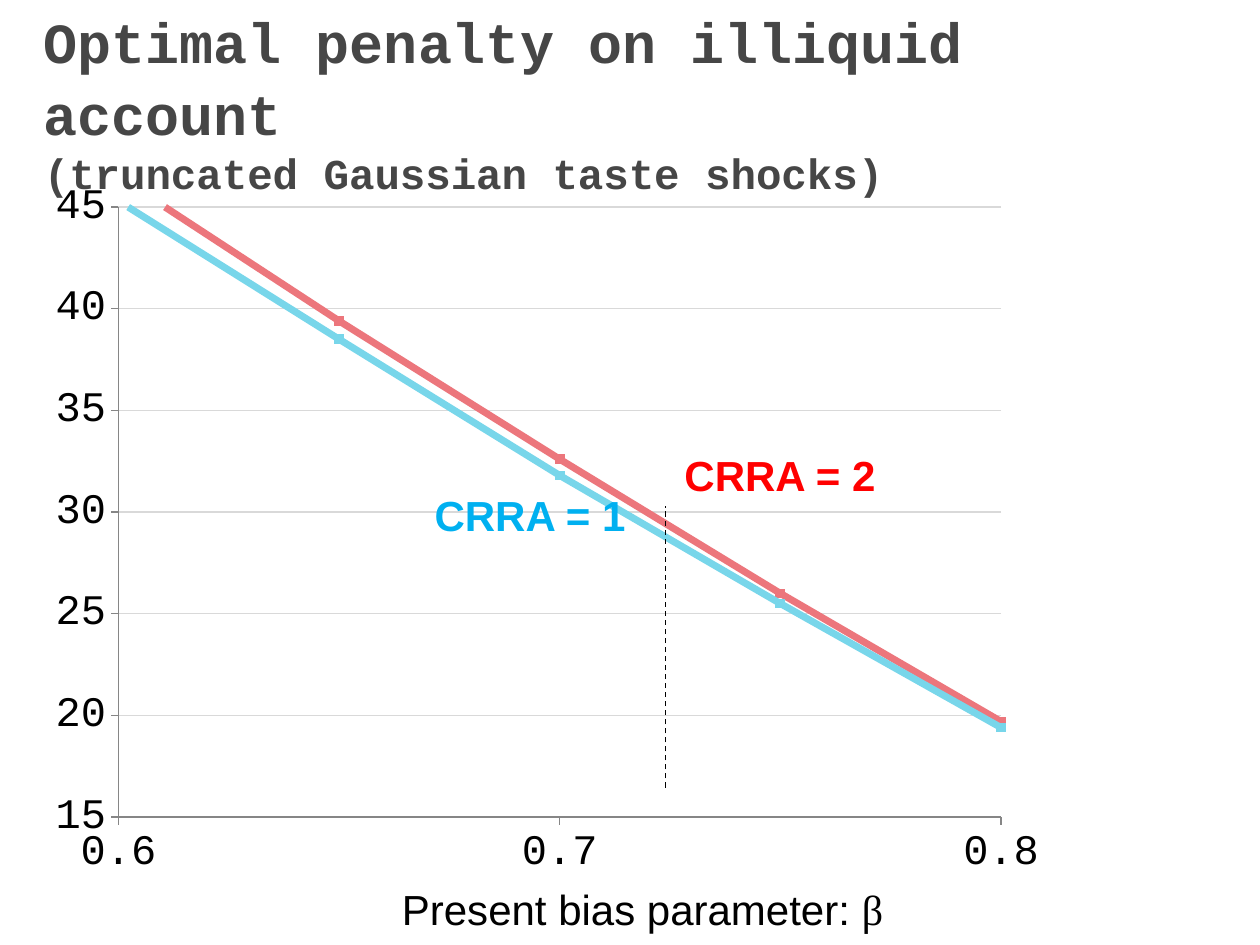
"""Build the slide on the optimal penalty for an illiquid account."""
from lxml import etree
from pptx import Presentation
from pptx.chart.data import XyChartData
from pptx.dml.color import RGBColor
from pptx.enum.chart import XL_CHART_TYPE, XL_MARKER_STYLE, XL_TICK_MARK
from pptx.enum.dml import MSO_LINE
from pptx.enum.shapes import MSO_CONNECTOR
from pptx.enum.text import MSO_ANCHOR
from pptx.oxml import parse_xml
from pptx.oxml.ns import nsdecls, qn
from pptx.util import Inches, Pt

SCATTER = XL_CHART_TYPE.XY_SCATTER_LINES
SQUARE = XL_MARKER_STYLE.SQUARE
OUTSIDE, NO_TICK = XL_TICK_MARK.OUTSIDE, XL_TICK_MARK.NONE
MIDDLE = MSO_ANCHOR.MIDDLE
STRAIGHT = MSO_CONNECTOR.STRAIGHT
DASH = MSO_LINE.DASH

deck = Presentation()
deck.slide_width, deck.slide_height = Inches(10), Inches(7.5)
slide = deck.slides.add_slide(deck.slide_layouts[6])
cell = deck.slide_width / 120


def color(hex_value):
    return RGBColor.from_string(hex_value)


def write(place, lines, hex_value, bold, wrap=False):
    box = slide.shapes.add_textbox(*(int(cell * n) for n in place))
    frame = box.text_frame
    frame.word_wrap = wrap
    for row, runs in enumerate(lines):
        line = frame.add_paragraph() if row else frame.paragraphs[0]
        for words, face, size in runs:
            run = line.add_run()
            run.text = words
            for key, value in {"name": face, "size": Pt(size), "bold": bold}.items():
                setattr(run.font, key, value)
            run.font.color.rgb = color(hex_value)
    return frame


heading = write((3, 4, 115, 15), [
    [("Optimal penalty on illiquid account", "Courier New", 32.4)],
    [("(truncated Gaussian taste shocks)", "Courier New", 24.3)],
], "464646", True, True)
heading.vertical_anchor = MIDDLE
heading.margin_bottom = Inches(0.37)
heading.paragraphs[0].line_spacing = 1.05

biases = [0.6, 0.65, 0.7, 0.75, 0.8]
penalties = {
    "Series 1": ("78D6EA", [45.3, 38.5, 31.8, 25.5, 19.4]),
    "Series 2": ("EC767C", [46.5, 39.4, 32.6, 26.0, 19.7]),
}
data = XyChartData()
for label, (hue, values) in penalties.items():
    curve = data.add_series(label)
    for bias, penalty in zip(biases, values):
        curve.add_data_point(bias, penalty)

chart = slide.shapes.add_chart(SCATTER, *(int(cell * n) for n in (3, 16, 115, 69)), data).chart
chart.has_legend = chart.has_title = False
chart.font.name, chart.font.size = "Courier New", Pt(24)
chart.font.color.rgb = color("000000")
chart.plots[0].vary_by_categories = False

for curve, (hue, values) in zip(chart.plots[0].series, penalties.values()):
    curve.smooth = False
    curve.format.line.width = Pt(4)
    curve.format.line.color.rgb = color(hue)
    curve.marker.style, curve.marker.size = SQUARE, 5
    curve.marker.format.fill.solid()
    curve.marker.format.fill.fore_color.rgb = color(hue)
    curve.marker.format.line.color.rgb = color(hue)

scales = [
    (chart.category_axis, {"minimum_scale": 0.6, "maximum_scale": 0.8000000000000002,
                           "major_unit": 0.1, "has_major_gridlines": False}),
    (chart.value_axis, {"minimum_scale": 15, "maximum_scale": 45,
                        "major_unit": 5, "has_major_gridlines": True}),
]
for axis, settings in scales:
    for key, value in settings.items():
        setattr(axis, key, value)
    axis.major_tick_mark, axis.minor_tick_mark = OUTSIDE, NO_TICK
    axis.tick_labels.font.size = Pt(24)
    axis.tick_labels.number_format = "General"
    axis.tick_labels.number_format_is_linked = False
    axis.format.line.color.rgb = color("868686")
    axis.format.line.width = Pt(0.75)
gridlines = chart.value_axis.major_gridlines.format.line
gridlines.color.rgb, gridlines.width = color("D9D9D9"), Pt(0.75)

plot_area = chart.plots[0]._element.getparent()
for old in plot_area.findall(qn("c:layout")):
    plot_area.remove(old)
shares = "".join(f'<c:{key} val="{value}"/>' for key, value in {
    "layoutTarget": "inner", "xMode": "edge", "yMode": "edge",
    "x": 0.072, "y": 0.054, "w": 0.731, "h": 0.842}.items())
plot_area.insert(0, parse_xml(
    f'<c:layout {nsdecls("c")}><c:manualLayout>{shares}</c:manualLayout></c:layout>'))

write((64, 42.2, 20.8, 6), [[("CRRA = 2", "Arial", 24)]], "FF0000", True)
write((40.2, 46, 20.8, 6), [[("CRRA = 1", "Arial", 24)]], "00B0F0", True)
write((37.1, 83.6, 48.7, 6), [[("Present bias parameter: ", "Arial", 24),
                               ("β", "Times New Roman", 24)]], "000000", False)

benchmark = slide.shapes.add_connector(STRAIGHT, *(int(cell * n) for n in (63.4, 75, 63.4, 48.2)))
benchmark.line.color.rgb = color("000000")
benchmark.line.width, benchmark.line.dash_style = Pt(0.75), DASH
etree.SubElement(benchmark._element.spPr, qn("a:effectLst"))

deck.save("out.pptx")
